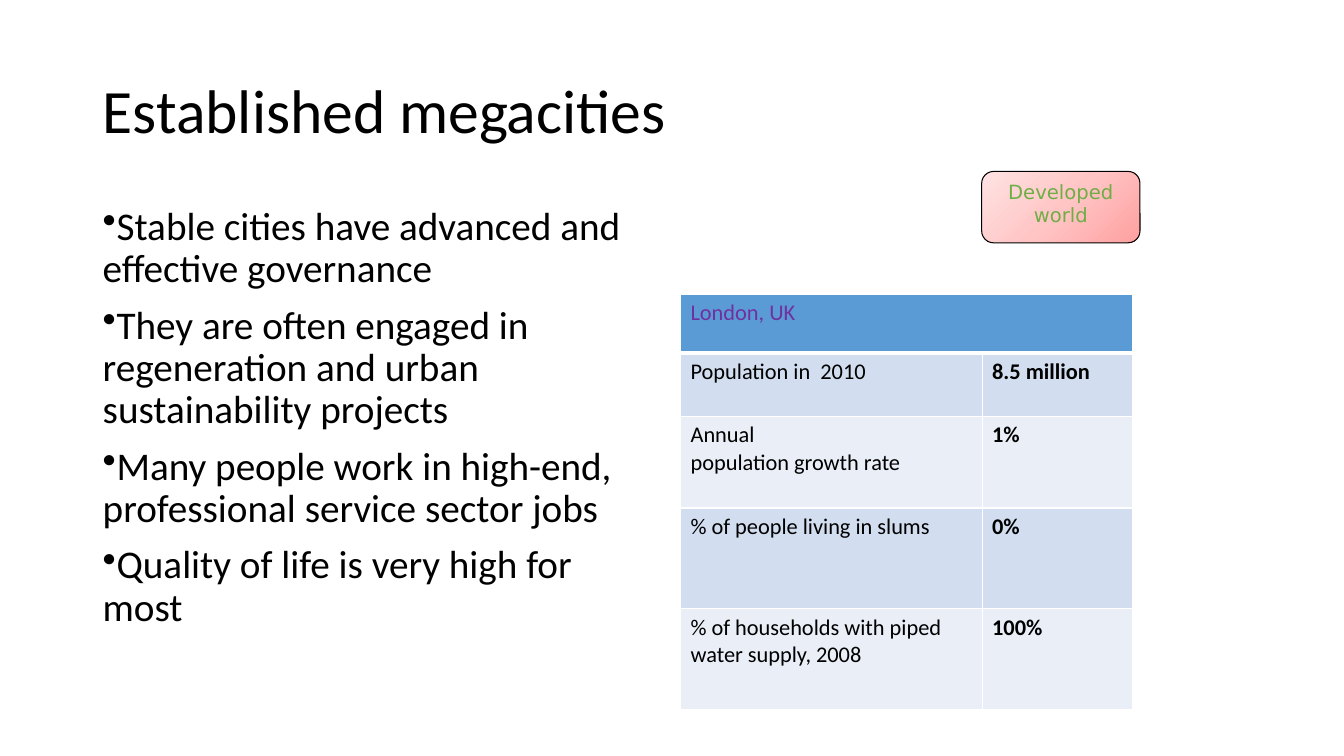
"""Build the slide on established megacities."""
import pptx
import pptx.dml.color
import pptx.enum.shapes
import pptx.enum.text
import pptx.oxml
import pptx.oxml.ns
import pptx.util
from lxml import etree

Cm, Pt = pptx.util.Cm, pptx.util.Pt
ANCHOR = pptx.enum.text.MSO_ANCHOR
ALIGN = pptx.enum.text.PP_ALIGN
qn = pptx.oxml.ns.qn

HEADING = "Established megacities"
POINTS = [
    "Stable cities have advanced and effective governance",
    "They are often engaged in regeneration and urban sustainability projects",
    "Many people work in high-end, professional service sector jobs",
    "Quality of life is very high for most",
]
BADGE = "Developed world"
BADGE_STOPS = [(0, "FFA0A0"), (50, "FFC5C5"), (100, "FFE3E3")]
CITY = "London, UK"
FACTS = [
    ("Population in  2010", "8.5 million"),
    ("Annual\npopulation growth rate", "1%"),
    ("% of people living in slums", "0%"),
    ("% of households with piped water supply, 2008", "100%"),
]
COLUMN_WIDTHS = [7.6, 3.8]
ROW_HEIGHTS = [1.47, 1.6, 2.31, 2.54, 2.54]
HEADER_FILL, BAND_FILLS = "5B9BD5", ["D2DEEF", "EAEFF7"]


def rgb(value):
    return pptx.dml.color.RGBColor.from_string(value)


def write(frame, text, size, color, font="Calibri", bold=False):
    frame.word_wrap = True
    frame.text = text
    for paragraph in frame.paragraphs:
        paragraph.font.name = font
        paragraph.font.size = Pt(size)
        paragraph.font.bold = bold
        paragraph.font.color.rgb = rgb(color)


def add_text(slide, box, text, size):
    frame = slide.shapes.add_textbox(*map(Cm, box)).text_frame
    write(frame, text, size, "000000")
    for paragraph in frame.paragraphs:
        paragraph.line_spacing = 0.9
    return frame


def add_points(slide):
    frame = add_text(slide, (2.34, 5.08, 14.4, 12.09), "\n".join(POINTS), 28)
    for paragraph in frame.paragraphs:
        paragraph.space_before = Pt(10)
        properties = paragraph._p.get_or_add_pPr()
        bullet = etree.Element(qn("a:buChar"), char="•")
        properties.find(qn("a:defRPr")).addprevious(bullet)


def add_badge(slide):
    rounded = pptx.enum.shapes.MSO_SHAPE.ROUNDED_RECTANGLE
    badge = slide.shapes.add_shape(rounded, *map(Cm, (24.74, 4.32, 3.99, 1.8)))
    badge.shadow.inherit = False
    badge.line.color.rgb = rgb("000000")
    badge.line.width = Pt(0.75)
    badge.fill.gradient()
    gradient = badge._element.spPr.find(qn("a:gradFill"))
    for child in list(gradient):
        gradient.remove(child)
    stops = etree.SubElement(gradient, qn("a:gsLst"))
    for percent, color in BADGE_STOPS:
        stop = etree.SubElement(stops, qn("a:gs"), pos=str(percent * 1000))
        etree.SubElement(stop, qn("a:srgbClr"), val=color)
    circle = etree.SubElement(gradient, qn("a:path"), path="circle")
    etree.SubElement(circle, qn("a:fillToRect"), l="100000", t="100000")
    write(badge.text_frame, BADGE, 14, "70AD47", "DejaVu Sans")
    badge.text_frame.vertical_anchor = ANCHOR.TOP
    badge.text_frame.paragraphs[0].alignment = ALIGN.CENTER


def fill_cell(cell, text, fill, color="000000", bold=False, bottom=1):
    write(cell.text_frame, text, 16, color, bold=bold)
    cell.fill.solid()
    cell.fill.fore_color.rgb = rgb(fill)
    properties = cell._tc.get_or_add_tcPr()
    for index, (side, width) in enumerate(zip("LRTB", (1, 1, 1, bottom))):
        border = etree.Element(qn("a:ln" + side), w=str(Pt(width)))
        paint = etree.SubElement(border, qn("a:solidFill"))
        etree.SubElement(paint, qn("a:srgbClr"), val="FFFFFF")
        properties.insert(index, border)


def add_facts(slide):
    size = sum(COLUMN_WIDTHS), sum(ROW_HEIGHTS)
    table = slide.shapes.add_table(
        len(ROW_HEIGHTS), len(COLUMN_WIDTHS), Cm(17.15), Cm(7.42), *map(Cm, size)
    ).table
    for column, width in zip(table.columns, COLUMN_WIDTHS):
        column.width = Cm(width)
    for row, height in zip(table.rows, ROW_HEIGHTS):
        row.height = Cm(height)
    table.cell(0, 0).merge(table.cell(0, 1))
    for column, text in enumerate((CITY, "")):
        fill_cell(table.cell(0, column), text, HEADER_FILL, "7030A0", bottom=3)
    for row, fact in enumerate(FACTS, 1):
        for column, text in enumerate(fact):
            fill = BAND_FILLS[(row - 1) % 2]
            fill_cell(table.cell(row, column), text, fill, bold=column == 1)


def main():
    deck = pptx.Presentation()
    deck.slide_width, deck.slide_height = Cm(33.87), Cm(19.05)
    slide = deck.slides.add_slide(deck.slide_layouts[6])
    heading = add_text(slide, (2.34, 1.02, 29.21, 3.68), HEADING, 44)
    heading.vertical_anchor = ANCHOR.MIDDLE
    add_points(slide)
    add_badge(slide)
    add_facts(slide)
    deck.save("out.pptx")


if __name__ == "__main__":
    main()
